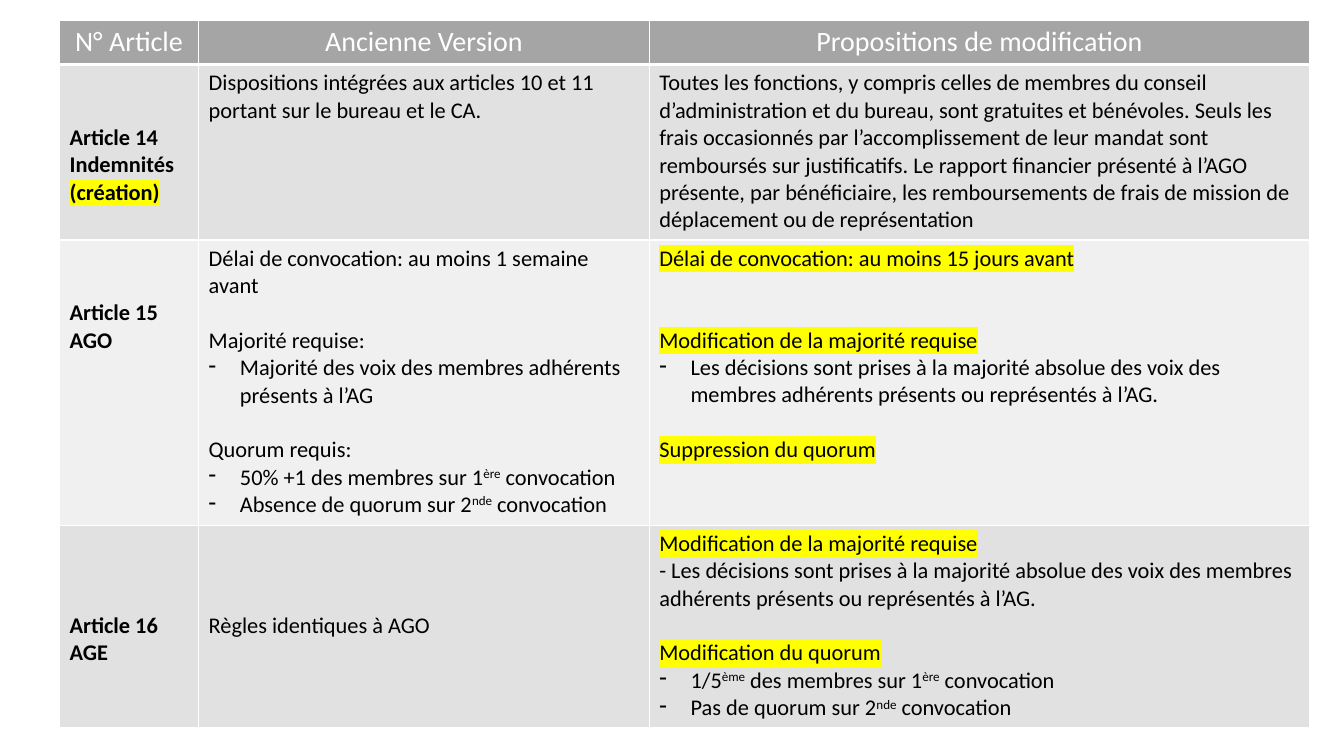
from lxml import etree
from pptx import Presentation
from pptx import util as u
from pptx.dml.color import RGBColor
from pptx.enum import text
from pptx.oxml import ns

COLORS = {"header": "A5A5A5", "dark": "E1E1E1", "light": "F0F0F0",
          "white": "FFFFFF", "black": "000000", "mark": "FFFF00"}
FONT = "Calibri"
LINE = 0.27  # height of one line of body text, in inches
COLUMNS = [1.38, 4.47, 6.55]
HEADERS = ["N° Article", "Ancienne Version", "Propositions de modification"]
MAJORITY = ("Les décisions sont prises à la majorité absolue des voix des "
            "membres adhérents présents ou représentés à l’AG.")

# Paragraph: (text, styles, lines of space before); ^ encloses superscripts
# Row: height, fill, and for each cell its lines of space on top and paragraphs
ROWS = [
    (1.74, "dark", [
        (2, [("Article 14", "bold", 0), ("Indemnités", "bold", 0),
             ("(création)", "bold mark", 0)]),
        (0, [("Dispositions intégrées aux articles 10 et 11 portant sur le "
              "bureau et le CA.", "", 0)]),
        (0, [("Toutes les fonctions, y compris celles de membres du conseil "
              "d’administration et du bureau, sont gratuites et bénévoles. "
              "Seuls les frais occasionnés par l’accomplissement de leur "
              "mandat sont remboursés sur justificatifs. Le rapport financier "
              "présenté à l’AGO présente, par bénéficiaire, les "
              "remboursements de frais de mission de déplacement ou de "
              "représentation", "", 0)]),
    ]),
    (2.83, "light", [
        (2, [("Article 15", "bold", 0), ("AGO", "bold", 0)]),
        (0, [("Délai de convocation: au moins 1 semaine avant", "", 0),
             ("Majorité requise:", "", 1),
             ("Majorité des voix des membres adhérents présents à l’AG",
              "bullet", 0),
             ("Quorum requis:", "", 1),
             ("50% +1 des membres sur 1^ère^ convocation", "bullet", 0),
             ("Absence de quorum sur 2^nde^ convocation", "bullet", 0)]),
        (0, [("Délai de convocation: au moins 15 jours avant", "mark", 0),
             ("Modification de la majorité requise", "mark", 2),
             (MAJORITY, "bullet", 0),
             ("Suppression du quorum", "mark", 1)]),
    ]),
    (2.01, "dark", [
        (3, [("Article 16", "bold", 0), ("AGE", "bold", 0)]),
        (3, [("Règles identiques à AGO", "", 0)]),
        (0, [("Modification de la majorité requise", "mark", 0),
             ("- " + MAJORITY, "", 0),
             ("Modification du quorum", "mark", 1),
             ("1/5^ème^ des membres sur 1^ère^ convocation", "bullet", 0),
             ("Pas de quorum sur 2^nde^ convocation", "bullet", 0)]),
    ]),
]


def rgb(name):
    return RGBColor.from_string(COLORS[name])


def add_color(parent, tag, name):
    el = etree.SubElement(parent, ns.qn(tag))
    etree.SubElement(el, ns.qn("a:srgbClr"), val=COLORS[name])


def add_run(p, words, size, color, styles=(), raised=False):
    r = p.add_run()
    r.text = words
    r.font.size = u.Pt(size)
    r.font.bold = "bold" in styles
    r.font.color.rgb = rgb(color)
    rPr = r._r.get_or_add_rPr()
    if "mark" in styles:
        add_color(rPr, "a:highlight", "mark")
    if raised:
        rPr.set("baseline", "30000")
    r.font.name = FONT


def add_bullet(p):
    pPr = p._p.get_or_add_pPr()
    pPr.set("marL", str(u.Inches(0.31)))
    pPr.set("indent", str(-u.Inches(0.31)))
    etree.SubElement(pPr, ns.qn("a:buChar"), char="-")


def style_cell(cell, fill, bottom=1):
    # Borders come before the fill in the cell properties
    tcPr = cell._tc.get_or_add_tcPr()
    for side, width in zip("LRTB", (1, 1, 1, bottom)):
        ln = etree.SubElement(tcPr, ns.qn("a:ln" + side), w=str(u.Pt(width)))
        add_color(ln, "a:solidFill", "white")
    cell.fill.solid()
    cell.fill.fore_color.rgb = rgb(fill)


def fill_body_cell(cell, top_lines, paragraphs):
    cell.margin_top = u.Inches(0.05 + top_lines * LINE)
    tf = cell.text_frame
    for i, (words, styles, gap) in enumerate(paragraphs):
        p = tf.add_paragraph() if i else tf.paragraphs[0]
        if gap:
            p.space_before = u.Inches(gap * LINE)
        if "bullet" in styles:
            add_bullet(p)
        for j, part in enumerate(words.split("^")):
            add_run(p, part, 16, "black", styles.split(), raised=j % 2 == 1)


def add_articles_table(s, left, top, width, height):
    table = s.shapes.add_table(len(ROWS) + 1, len(COLUMNS), u.Inches(left),
                               u.Inches(top), u.Inches(width),
                               u.Inches(height)).table
    for column, size in zip(table.columns, COLUMNS):
        column.width = u.Inches(size)

    # Header row takes the height left by the body rows
    table.rows[0].height = u.Inches(height - sum(row[0] for row in ROWS))
    for cell, title in zip(table.rows[0].cells, HEADERS):
        style_cell(cell, "header", bottom=3)
        p = cell.text_frame.paragraphs[0]
        p.alignment = text.PP_ALIGN.CENTER
        add_run(p, title, 20, "white")

    # Body rows
    for i, (row_height, fill, cells) in enumerate(ROWS, 1):
        table.rows[i].height = u.Inches(row_height)
        for cell, (top_lines, paragraphs) in zip(table.rows[i].cells, cells):
            style_cell(cell, fill)
            fill_body_cell(cell, top_lines, paragraphs)
    # Keep the thick rule under the header on the first body row too
    for cell in table.rows[1].cells:
        cell._tc.tcPr.find(ns.qn("a:lnT")).set("w", str(u.Pt(3)))


def main():
    prs = Presentation()
    prs.slide_width, prs.slide_height = u.Inches(13.33), u.Inches(7.5)
    s = prs.slides.add_slide(prs.slide_layouts[6])
    add_articles_table(s, 0.59, 0.2, 12.4, 7.02)
    prs.save("out.pptx")


if __name__ == "__main__":
    main()
